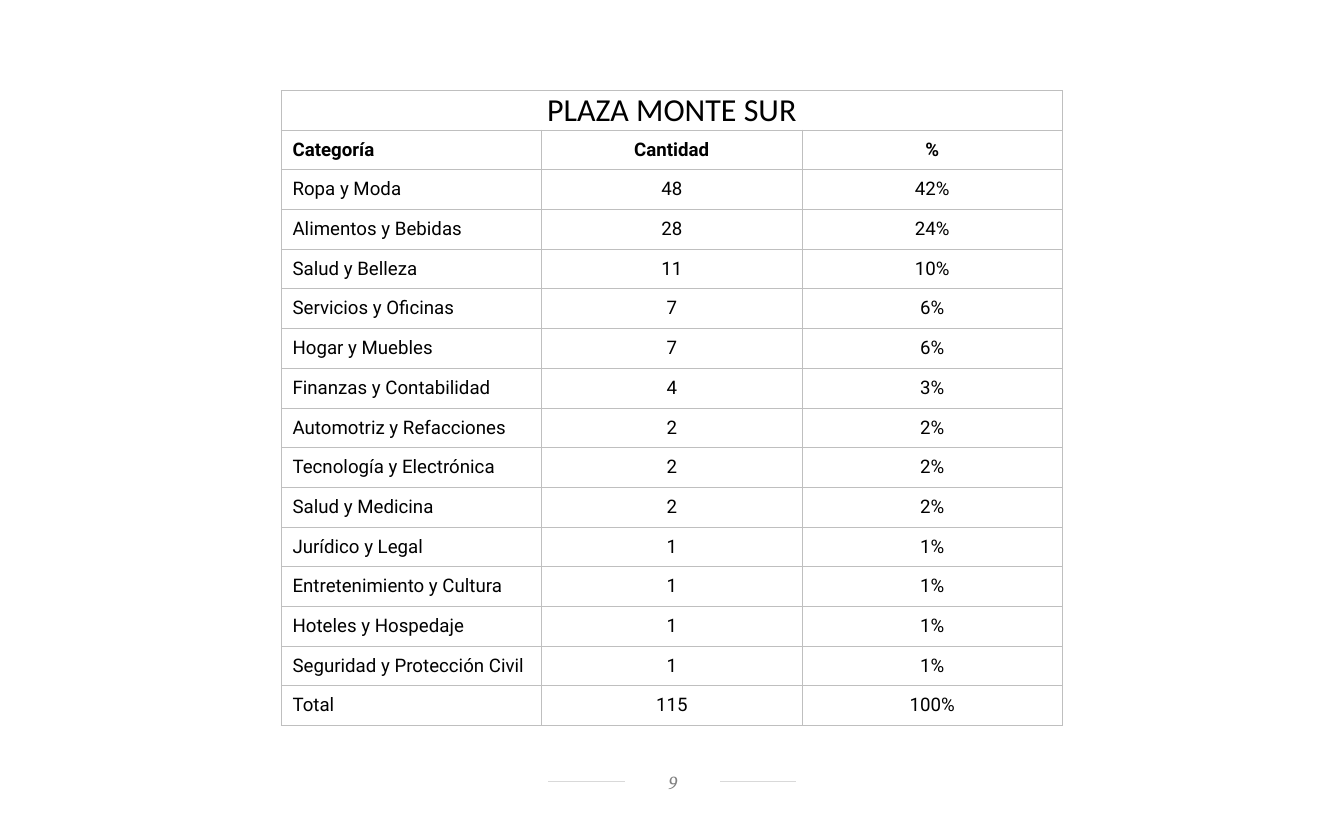
import pptx
import pptx.util
import pptx.dml.color
import pptx.enum.shapes
import pptx.enum.text
import pptx.oxml
import pptx.oxml.ns

Cm, Pt = pptx.util.Cm, pptx.util.Pt
ALIGN = pptx.enum.text.PP_ALIGN
MIDDLE = pptx.enum.text.MSO_ANCHOR.MIDDLE
GRID_GREY = "BFBFBF"


def colour(hex_string):
    return pptx.dml.color.RGBColor.from_string(hex_string)


def write(frame, text, font="Roboto", size=14, color="000000",
          bold=False, italic=False, align=ALIGN.CENTER):
    paragraph = frame.paragraphs[0]
    paragraph.alignment = align
    run = paragraph.add_run()
    run.text = text
    run.font.name = font
    run.font.size = Pt(size)
    run.font.bold = bold
    run.font.italic = italic
    run.font.color.rgb = colour(color)


deck = pptx.Presentation()
deck.slide_width, deck.slide_height = Cm(35.56), Cm(21.59)
slide = deck.slides.add_slide(deck.slide_layouts[6])

# Footer rule, with the page number set in its gap
footer_rule = slide.shapes.add_connector(
    pptx.enum.shapes.MSO_CONNECTOR.STRAIGHT, Cm(14.5), Cm(20.67), Cm(21.06), Cm(20.67))
footer_rule.line.color.rgb = colour("D9D9D9")
footer_rule.line.width = Pt(0.5)
footer_rule._element.spPr.append(pptx.oxml.parse_xml(
    f'<a:effectLst {pptx.oxml.ns.nsdecls("a")}/>'))

page_number = slide.shapes.add_shape(
    pptx.enum.shapes.MSO_SHAPE.RECTANGLE, Cm(16.54), Cm(20.27), Cm(2.51), Cm(0.74))
page_number.shadow.inherit = False
page_number.fill.solid()
page_number.fill.fore_color.rgb = colour("FFFFFF")
page_number.line.fill.background()
number_frame = page_number.text_frame
number_frame.vertical_anchor = MIDDLE
number_frame.margin_left, number_frame.margin_right = Cm(0.3), Cm(0.25)
number_frame.margin_top, number_frame.margin_bottom = Cm(0.05), Cm(0.13)
write(number_frame, "9", font="Vollkorn", color="808080", italic=True)

# Shops per category; the shares follow from the counts
shops = {
    "Ropa y Moda": 48,
    "Alimentos y Bebidas": 28,
    "Salud y Belleza": 11,
    "Servicios y Oficinas": 7,
    "Hogar y Muebles": 7,
    "Finanzas y Contabilidad": 4,
    "Automotriz y Refacciones": 2,
    "Tecnología y Electrónica": 2,
    "Salud y Medicina": 2,
    "Jurídico y Legal": 1,
    "Entretenimiento y Cultura": 1,
    "Hoteles y Hospedaje": 1,
    "Seguridad y Protección Civil": 1,
}
total = sum(shops.values())
rows = [("PLAZA MONTE SUR", "", ""), ("Categoría", "Cantidad", "%")]
for category, count in [*shops.items(), ("Total", total)]:
    rows.append((category, str(count), f"{count / total:.0%}"))

# Table grid
row_height, column_width = 1.05, 6.89
shops_table = slide.shapes.add_table(
    len(rows), 3, Cm(7.44), Cm(2.39),
    Cm(3 * column_width), Cm(len(rows) * row_height)).table
shops_table.first_row = shops_table.horz_banding = False
for column in shops_table.columns:
    column.width = Cm(column_width)
for row in shops_table.rows:
    row.height = Cm(row_height)
shops_table.cell(0, 0).merge(shops_table.cell(0, 2))

# Cells: title row, bold header row, then the figures
for r, values in enumerate(rows):
    for c, value in enumerate(values):
        cell = shops_table.cell(r, c)
        is_category = r > 0 and c == 0
        cell.vertical_anchor = MIDDLE
        cell.margin_left = Cm(0.3 if is_category else 0.03)
        cell.margin_right = Cm(0.03)
        cell.margin_top = cell.margin_bottom = 0
        cell_properties = cell._tc.get_or_add_tcPr()
        for side in "LRTB":
            cell_properties.append(pptx.oxml.parse_xml(
                f'<a:ln{side} {pptx.oxml.ns.nsdecls("a")} w="{Pt(0.5)}"><a:solidFill>'
                f'<a:srgbClr val="{GRID_GREY}"/></a:solidFill></a:ln{side}>'))
        cell.fill.background()
        if r == 0 and c == 0:
            write(cell.text_frame, value, font="Calibri", size=24)
        elif r > 0:
            write(cell.text_frame, value, bold=r == 1,
                  align=ALIGN.LEFT if is_category else ALIGN.CENTER)

deck.save("out.pptx")
